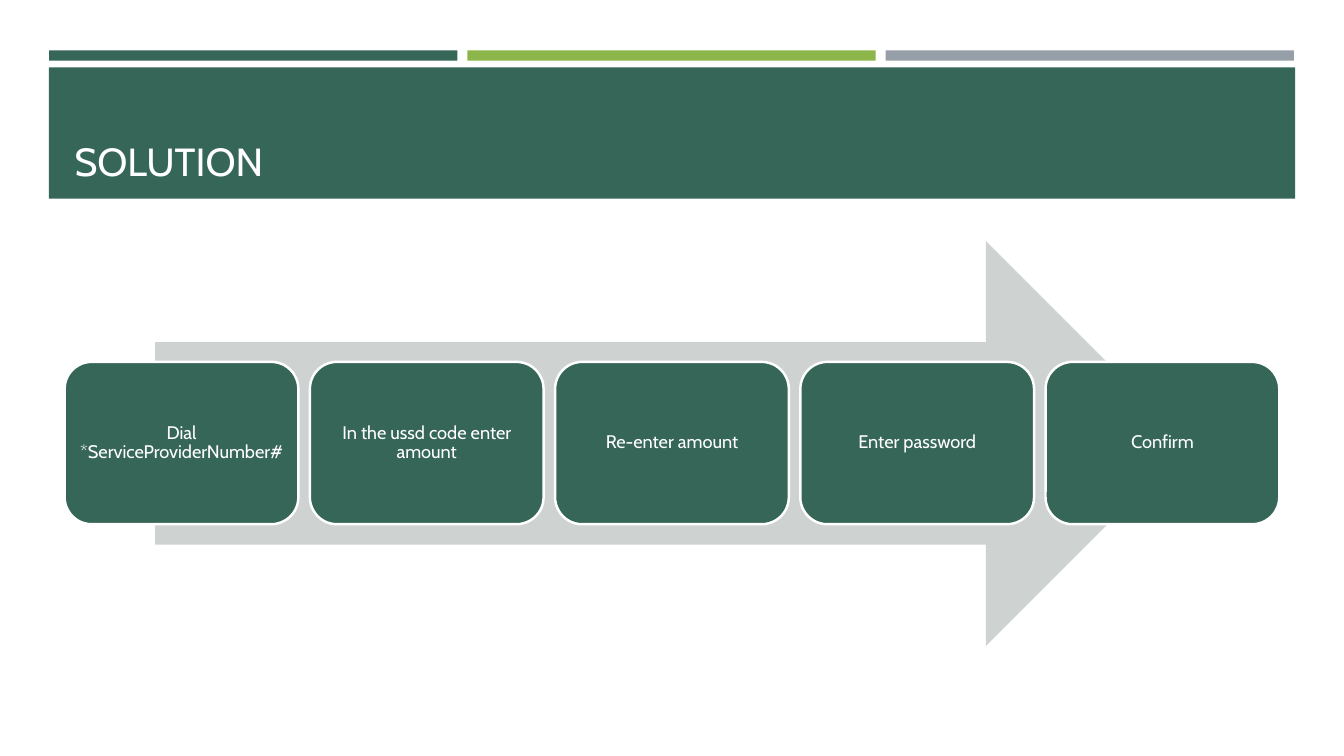
from dataclasses import dataclass

from pptx import Presentation
from pptx.dml.color import RGBColor
from pptx.enum.shapes import MSO_SHAPE
from pptx.enum.text import MSO_ANCHOR, PP_ALIGN
from pptx.util import Cm, Pt

RECT = MSO_SHAPE.RECTANGLE
ROUND_RECT = MSO_SHAPE.ROUNDED_RECTANGLE
RIGHT_ARROW = MSO_SHAPE.RIGHT_ARROW
MIDDLE, BOTTOM = MSO_ANCHOR.MIDDLE, MSO_ANCHOR.BOTTOM
CENTER, LEFT = PP_ALIGN.CENTER, PP_ALIGN.LEFT

FONT = "Cabin"
GREEN, LIME, GREY = "366658", "8CB64A", "969FA7"
PALE, WHITE = "CED3D1", "FFFFFF"


@dataclass
class Box:
    """Position and size in centimetres."""
    left: float
    top: float
    width: float
    height: float

    def shifted(self, dx: float) -> "Box":
        return Box(self.left + dx, self.top, self.width, self.height)

    def lengths(self) -> list:
        return [Cm(v) for v in (self.left, self.top, self.width, self.height)]


FIRST_BAR, BAR_PITCH = Box(1.24, 1.27, 10.29, 0.26), 10.54
BAR_COLOURS = [GREEN, LIME, GREY]
BANNER = Box(1.23, 1.7, 31.41, 3.31)
TITLE = Box(1.63, 1.96, 30.63, 2.82)
ARROW = Box(3.91, 6.07, 26.04, 10.21)
FIRST_STEP, STEP_PITCH = Box(1.63, 9.12, 5.89, 4.09), 6.18
STEPS = [
    "Dial *ServiceProviderNumber#",
    "In the ussd code enter amount",
    "Re-enter amount",
    "Enter password",
    "Confirm",
]


def rgb(colour: str) -> RGBColor:
    return RGBColor.from_string(colour)


def add_block(s, kind, box: Box, fill: str):
    """Add a flat filled shape without outline."""
    sp = s.shapes.add_shape(kind, *box.lengths())
    sp.shadow.inherit = False
    sp.fill.solid()
    sp.fill.fore_color.rgb = rgb(fill)
    sp.line.fill.background()
    return sp


def set_text(sp, text: str, size: float, anchor, align):
    tf = sp.text_frame
    tf.word_wrap = True
    tf.vertical_anchor = anchor
    p = tf.paragraphs[0]
    p.text = text
    p.alignment = align
    p.font.name = FONT
    p.font.size = Pt(size)
    p.font.color.rgb = rgb(WHITE)
    return tf


def add_step(s, box: Box, text: str) -> None:
    sp = add_block(s, ROUND_RECT, box, GREEN)
    sp.line.color.rgb = rgb(WHITE)
    sp.line.width = Pt(1.75)
    tf = set_text(sp, text, 13, MIDDLE, CENTER)
    tf.margin_left = tf.margin_right = tf.margin_top = tf.margin_bottom = Cm(0.13)
    tf.paragraphs[0].line_spacing = 0.9


def main() -> None:
    prs = Presentation()
    prs.slide_width, prs.slide_height = Cm(33.87), Cm(19.05)
    s = prs.slides.add_slide(prs.slide_layouts[6])

    for i, colour in enumerate(BAR_COLOURS):
        add_block(s, RECT, FIRST_BAR.shifted(i * BAR_PITCH), colour)
    add_block(s, RECT, BANNER, GREEN)
    set_text(s.shapes.add_textbox(*TITLE.lengths()), "SOLUTION", 28, BOTTOM, LEFT)

    add_block(s, RIGHT_ARROW, ARROW, PALE)
    for i, text in enumerate(STEPS):
        add_step(s, FIRST_STEP.shifted(i * STEP_PITCH), text)

    prs.save("out.pptx")


if __name__ == "__main__":
    main()
